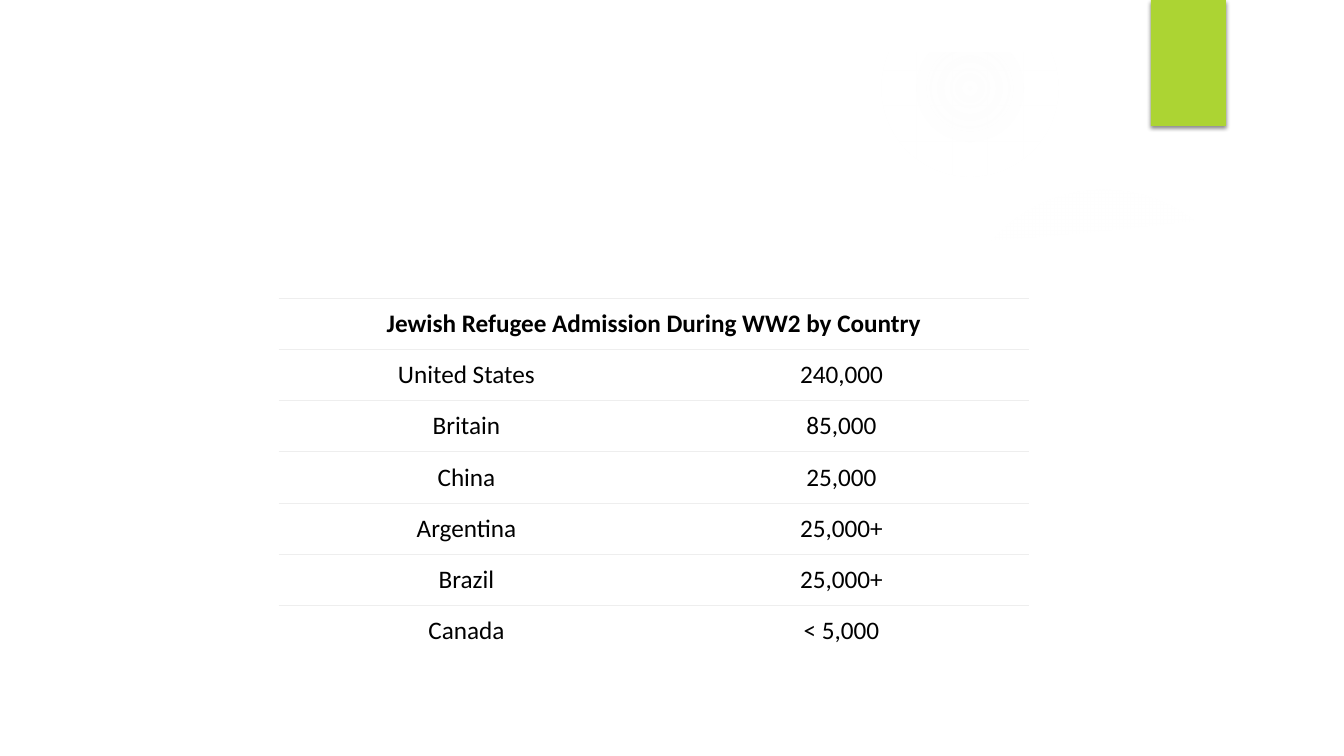
from math import cos, radians, sin

from lxml import etree
from pptx import Presentation
from pptx.dml.color import RGBColor
from pptx.enum.shapes import MSO_SHAPE
from pptx.enum.text import MSO_ANCHOR, PP_ALIGN
from pptx.oxml import parse_xml
from pptx.oxml.ns import nsdecls, qn
from pptx.util import Pt

PX = 914400 / 100.8
WHITE = RGBColor(0xFF, 0xFF, 0xFF)
BLACK = RGBColor(0x00, 0x00, 0x00)
GREEN = RGBColor(0xAC, 0xD4, 0x33)
GLOW_GREY = RGBColor(0xF7, 0xF7, 0xF7)
RULE_GREY = RGBColor(0xEE, 0xEE, 0xEE)

# left, top, diameter, then (stop, opacity) pairs in percent
GLOWS = [
    (0, 294, 462, [(0, 11), (36, 10), (75, 0)]),
    (0, 320, 260, [(0, 8), (36, 8), (72, 0)]),
    (949, 184, 310, [(0, 7), (36, 6), (69, 0)]),
    (882, 0, 176, [(0, 14), (36, 7), (73, 0)]),
    (949, 647, 109, [(0, 14), (36, 7), (66, 0)]),
]
BAND_TILT = 350.2
BAND_CENTRE = (1118, 223)
BAND = [(941, 252), (1011, 249), (1111, 240), (1215, 228), (1299, 216),
        (1293, 167), (1200, 196), (1118, 216), (1039, 231), (937, 245)]
PANEL = [(50, 206), (50, 706), (1294, 706), (1294, 206), (1210, 219),
         (1125, 229), (1040, 237), (957, 243), (847, 248), (714, 250),
         (588, 248), (448, 243), (324, 235), (218, 226), (136, 217)]
FRAME_OUTER = [(0, 0), (0, 756), (1344, 756), (1344, 0)]
FRAME_INNER = [(1291, 704), (52, 704), (52, 52), (1291, 52)]

TITLE = "Jewish Refugee Admission During WW2 by Country"
ADMISSIONS = [
    ("United States", "240,000"),
    ("Britain", "85,000"),
    ("China", "25,000"),
    ("Argentina", "25,000+"),
    ("Brazil", "25,000+"),
    ("Canada", "< 5,000"),
]


def px(*lengths):
    return [round(length * PX) for length in lengths]


def set_borders(cell, ruled_sides):
    """Draw thin grey rules on the given sides and clear the others."""
    properties = cell._tc.get_or_add_tcPr()
    for index, side in enumerate("LRTB"):
        line = etree.Element(qn(f"a:ln{side}"), w=str(Pt(0.75)))
        if side in ruled_sides:
            fill = etree.SubElement(line, qn("a:solidFill"))
            etree.SubElement(fill, qn("a:srgbClr"), val=str(RULE_GREY))
        else:
            etree.SubElement(line, qn("a:noFill"))
        properties.insert(index, line)


deck = Presentation()
deck.slide_width, deck.slide_height = px(1344, 756)
page = deck.slides.add_slide(deck.slide_layouts[6])
page.background.fill.solid()
page.background.fill.fore_color.rgb = WHITE

# Soft round glows
for left, top, size, stops in GLOWS:
    glow = page.shapes.add_shape(MSO_SHAPE.OVAL, *px(left, top, size, size))
    glow.line.fill.background()
    glow.shadow.inherit = False
    stop_xml = "".join(
        f'<a:gs pos="{stop * 1000}"><a:srgbClr val="{GLOW_GREY}">'
        f'<a:alpha val="{opacity * 1000}"/></a:srgbClr></a:gs>'
        for stop, opacity in stops)
    glow._element.spPr.find(qn("a:prstGeom")).addnext(parse_xml(
        f'<a:gradFill {nsdecls("a")}><a:gsLst>{stop_xml}</a:gsLst><a:path path="circle">'
        '<a:fillToRect l="50000" t="50000" r="50000" b="50000"/></a:path></a:gradFill>'))

# White band, panel and frame; the band is laid level before it is tilted
turn = radians(360 - BAND_TILT)
centre_x, centre_y = BAND_CENTRE
level_band = [
    (round(centre_x + (x - centre_x) * cos(turn) - (y - centre_y) * sin(turn)),
     round(centre_y + (x - centre_x) * sin(turn) + (y - centre_y) * cos(turn)))
    for x, y in BAND]
for contours, tilt, opacity in [
    ([level_band], BAND_TILT, 20),
    ([PANEL], 0, 100),
    ([FRAME_OUTER, FRAME_INNER], 0, 100),
]:
    builder = page.shapes.build_freeform(*contours[0][0], scale=PX)
    for contour in contours:
        if contour is not contours[0]:
            builder.move_to(*contour[0])
        builder.add_line_segments(contour[1:], close=True)
    sheet = builder.convert_to_shape()
    sheet.rotation = tilt
    sheet.fill.solid()
    sheet.fill.fore_color.rgb = WHITE
    sheet.line.fill.background()
    sheet.shadow.inherit = False
    if opacity < 100:
        colour = sheet._element.spPr.find(qn("a:solidFill"))[0]
        etree.SubElement(colour, qn("a:alpha"), val=str(opacity * 1000))

# Green tab at the top edge
tab = page.shapes.add_shape(MSO_SHAPE.RECTANGLE, *px(1151, 0, 75, 126))
tab.fill.solid()
tab.fill.fore_color.rgb = GREEN
tab.line.fill.background()
tab.shadow.inherit = False
tab_effects = tab._element.spPr.find(qn("a:effectLst"))
tab_effects.append(parse_xml(
    f'<a:outerShdw {nsdecls("a")} blurRad="{Pt(3)}" dist="{Pt(2)}" dir="5400000" '
    'algn="ctr" rotWithShape="0">'
    '<a:srgbClr val="000000"><a:alpha val="45000"/></a:srgbClr></a:outerShdw>'))

# Admissions table
rows = [(TITLE, ""), *ADMISSIONS]
table = page.shapes.add_table(len(rows), 2, *px(279, 298, 750, 359)).table
table.horz_banding = False
table.cell(0, 0).merge(table.cell(0, 1))
for row_index, texts in enumerate(rows):
    last = row_index == len(rows) - 1
    for column_index, text in enumerate(texts):
        cell = table.cell(row_index, column_index)
        cell.fill.solid()
        cell.fill.fore_color.rgb = WHITE
        set_borders(cell, "T" if last else "TB")
        cell.vertical_anchor = MSO_ANCHOR.MIDDLE
        cell.text = text
        para = cell.text_frame.paragraphs[0]
        para.alignment = PP_ALIGN.CENTER
        para.font.name = "Calibri"
        para.font.size = Pt(18)
        para.font.bold = row_index == 0
        para.font.color.rgb = BLACK

deck.save("out.pptx")
